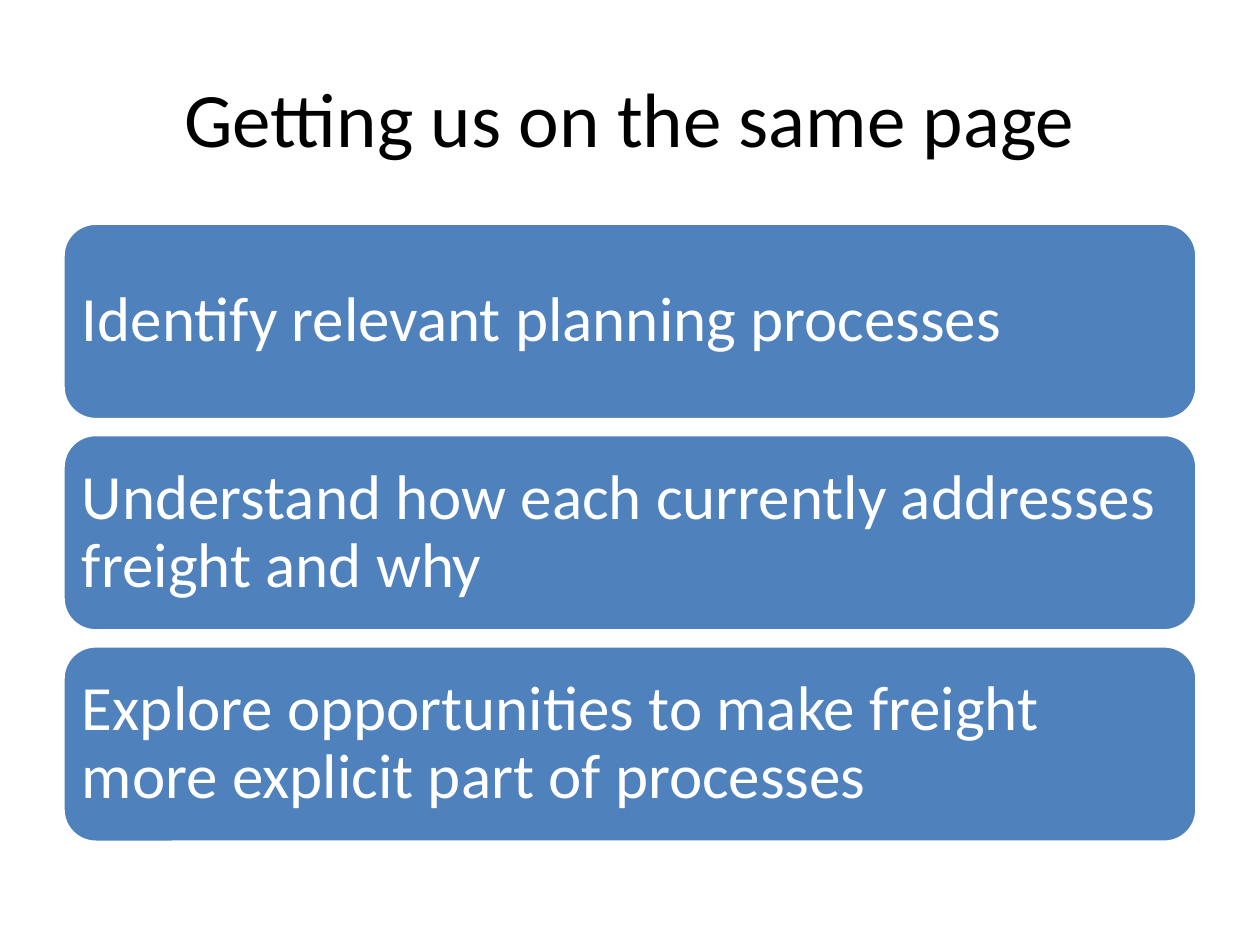
"""Build the slide that lists three steps for getting on the same page."""
from pptx import Presentation
from pptx.dml.color import RGBColor
from pptx.enum.shapes import MSO_SHAPE as Shape
from pptx.enum.text import MSO_ANCHOR as Anchor, PP_ALIGN as Align
from pptx.util import Cm, Pt

BLACK = RGBColor(0x00, 0x00, 0x00)
WHITE = RGBColor(0xFF, 0xFF, 0xFF)
BLUE = RGBColor(0x4F, 0x81, 0xBD)

LEFT, WIDTH = 1.27, 22.86
STEP_TOP, STEP_HEIGHT, STEP_PITCH = 4.5, 3.96, 4.26
STEPS = [
    "Identify relevant planning processes",
    "Understand how each currently addresses freight and why",
    "Explore opportunities to make freight more explicit part of processes",
]


def write_text(box, text, *, size, color, align, inset, spacing=1.0):
    frame = box.text_frame
    frame.word_wrap = True
    frame.vertical_anchor = Anchor.MIDDLE
    frame.margin_left = frame.margin_right = Cm(inset)
    frame.margin_top = frame.margin_bottom = Cm(inset)
    para = frame.paragraphs[0]
    para.alignment = align
    para.line_spacing = spacing
    span = para.add_run()
    span.text = text
    span.font.name = "Calibri"
    span.font.size = Pt(size)
    span.font.color.rgb = color


deck = Presentation()
deck.slide_width, deck.slide_height = Cm(25.4), Cm(19.05)
page = deck.slides.add_slide(deck.slide_layouts[6])

title = page.shapes.add_textbox(Cm(LEFT), Cm(0.76), Cm(WIDTH), Cm(3.18))
write_text(title, "Getting us on the same page", size=44, color=BLACK,
           align=Align.CENTER, inset=0.13)

for index, step in enumerate(STEPS):
    top = STEP_TOP + index * STEP_PITCH
    box = page.shapes.add_shape(Shape.ROUNDED_RECTANGLE, Cm(LEFT), Cm(top),
                                Cm(WIDTH), Cm(STEP_HEIGHT))
    box.shadow.inherit = False
    box.fill.solid()
    box.fill.fore_color.rgb = BLUE
    box.line.color.rgb = WHITE
    box.line.width = Pt(2)
    write_text(box, step, size=36, color=WHITE, align=Align.LEFT,
               inset=0.19, spacing=0.9)

deck.save("out.pptx")
